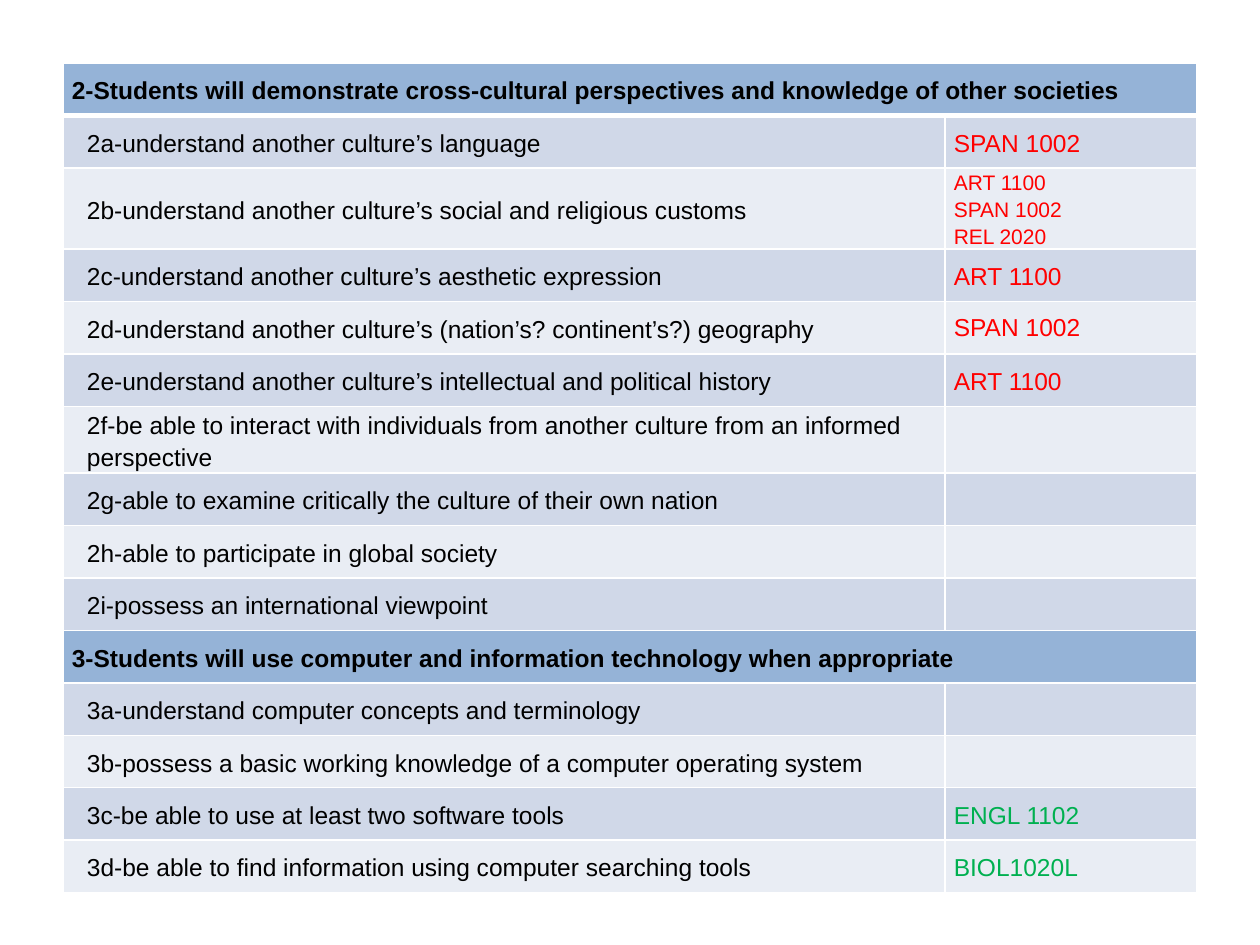
from lxml.etree import SubElement
from pptx import Presentation
from pptx.dml.color import RGBColor
from pptx.enum.text import MSO_ANCHOR as Anchor
from pptx.oxml import parse_xml
from pptx.oxml.ns import nsdecls, qn
from pptx.util import Inches, Pt

COLORS = {
    "heading": "95B3D7", "band_dark": "D0D8E8", "band_light": "E9EDF4",
    "border": "FFFFFF", "text": "000000", "red": "FF0000", "green": "00B050",
}

# Heading, colour of its courses, then (outcome, courses) pairs
SECTIONS = [
    ("2-Students will demonstrate cross-cultural perspectives and knowledge of other societies", "red", [
        ("2a-understand another culture’s language", ["SPAN 1002"]),
        ("2b-understand another culture’s social and religious customs",
         ["ART 1100", "SPAN 1002", "REL 2020"]),
        ("2c-understand another culture’s aesthetic expression", ["ART 1100"]),
        ("2d-understand another culture’s (nation’s? continent’s?) geography", ["SPAN 1002"]),
        ("2e-understand another culture’s intellectual and political history", ["ART 1100"]),
        ("2f-be able to interact with individuals from another culture from an informed perspective", []),
        ("2g-able to examine critically the culture of their own nation", []),
        ("2h-able to participate in global society", []),
        ("2i-possess an international viewpoint", []),
    ]),
    ("3-Students will use computer and information technology when appropriate", "green", [
        ("3a-understand computer concepts and terminology", []),
        ("3b-possess a basic working knowledge of a computer operating system", []),
        ("3c-be able to use at least two software tools", ["ENGL 1102"]),
        ("3d-be able to find information using computer searching tools", ["BIOL1020L"]),
    ]),
]
LEFT, TOP, WIDTH, HEIGHT = 0.5, 0.5, 9, 6.58
COLUMN_WIDTHS = [7, 2]
TALL_ROWS = {2: 0.64, 6: 0.53}
SINGLE_SPACED_ROW = 4


def write(cell, lines, color="text", size=14, bold=False, indent=0, spacing=1.15, anchor=Anchor.MIDDLE):
    cell.vertical_anchor = anchor
    frame = cell.text_frame
    for i, line in enumerate(lines):
        para = frame.add_paragraph() if i else frame.paragraphs[0]
        para.line_spacing = spacing
        if indent:
            para._p.get_or_add_pPr().set("marL", str(Inches(indent)))
        span = para.add_run()
        span.text = line
        font = span.font
        font.name, font.size, font.bold = "Arial", Pt(size), bold
        font.color.rgb = RGBColor.from_string(COLORS[color])


def dress(cell, fill, top=1, bottom=1):
    """Set the fill, margins and white borders of a cell."""
    cell.margin_left = cell.margin_right = Inches(0.07)
    cell.margin_top = cell.margin_bottom = 0
    cell.fill.solid()
    cell.fill.fore_color.rgb = RGBColor.from_string(COLORS[fill])
    properties = cell._tc.get_or_add_tcPr()
    for i, (side, width) in enumerate([("L", 1), ("R", 1), ("T", top), ("B", bottom)]):
        line = parse_xml(f'<a:ln{side} {nsdecls("a")} w="{Pt(width)}"/>')
        solid = SubElement(line, qn("a:solidFill"))
        SubElement(solid, qn("a:srgbClr"), val=COLORS["border"])
        properties.insert(i, line)


def main():
    deck = Presentation()
    deck.slide_width, deck.slide_height = Inches(10), Inches(7.5)
    page = deck.slides.add_slide(deck.slide_layouts[6])

    row_count = sum(1 + len(outcomes) for _, _, outcomes in SECTIONS)
    plain_height = (HEIGHT - sum(TALL_ROWS.values())) / (row_count - len(TALL_ROWS))
    table = page.shapes.add_table(
        row_count, 2, Inches(LEFT), Inches(TOP), Inches(WIDTH), Inches(HEIGHT)).table
    table.horz_banding = False
    for column, width in zip(table.columns, COLUMN_WIDTHS):
        column.width = Inches(width)
    for i, row in enumerate(table.rows):
        row.height = Inches(TALL_ROWS.get(i, plain_height))

    r = 0
    for heading, course_color, outcomes in SECTIONS:
        first, second = table.rows[r].cells
        first.merge(second)
        write(first, [heading], bold=True)
        for cell in (first, second):
            dress(cell, "heading", bottom=1 if r else 3)
        r += 1
        for i, (outcome, courses) in enumerate(outcomes):
            name_cell, course_cell = table.rows[r].cells
            for cell in (name_cell, course_cell):
                dress(cell, "band_light" if i % 2 else "band_dark", top=3 if r == 1 else 1)
            write(name_cell, [outcome], indent=0.12)
            several = len(courses) > 1
            write(course_cell, courses, color=course_color, size=12 if several else 14,
                  spacing=1.0 if r == SINGLE_SPACED_ROW else 1.15,
                  anchor=Anchor.TOP if several else Anchor.MIDDLE)
            r += 1

    deck.save("out.pptx")


if __name__ == "__main__":
    main()
